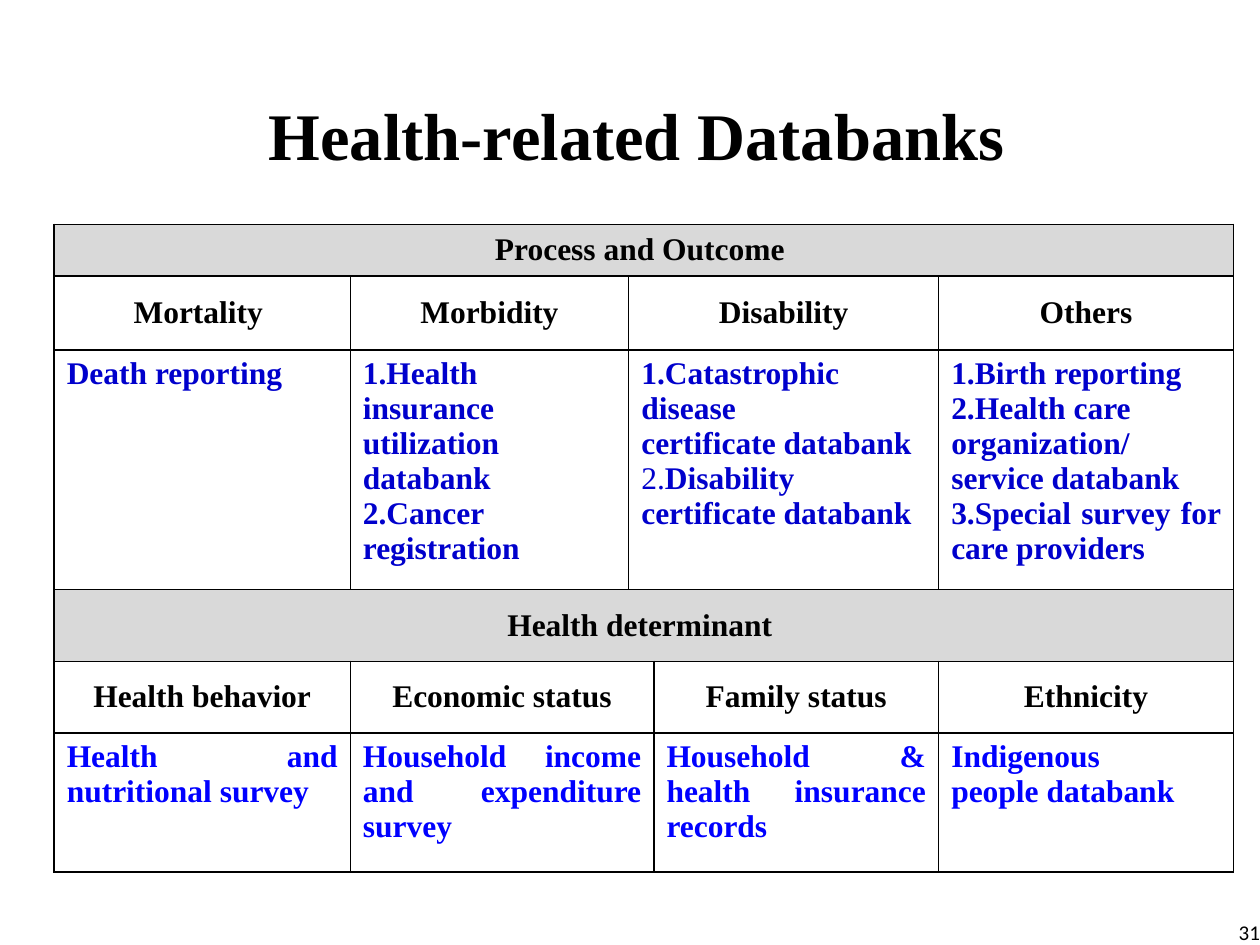
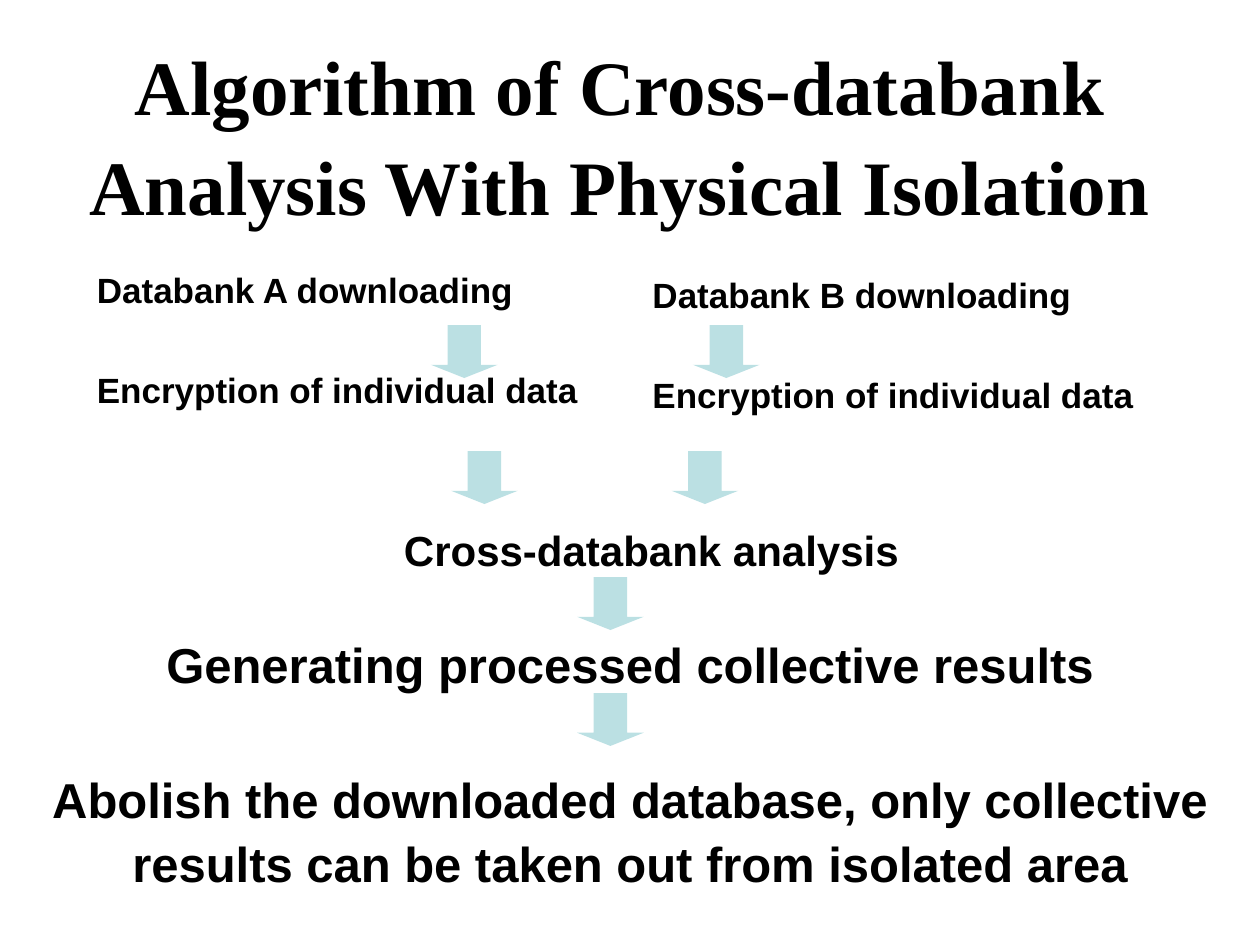
from lxml.etree import SubElement
from pptx import Presentation
from pptx.dml.color import RGBColor
from pptx.enum.shapes import MSO_SHAPE
from pptx.enum.text import MSO_ANCHOR, MSO_AUTO_SIZE, PP_ALIGN
from pptx.oxml.ns import qn
from pptx.util import Inches, Pt

BLACK, WHITE, GREY, TEAL = "000000", "FFFFFF", "D9D9D9", "BBE0E3"
NAVY, BLUE = "0000CC", "0000FF"
SERIF, SANS, FOOTER_FONT = "Times New Roman", "Arial", "Calibri"
TITLE_ONLY = 5
TITLE_MARGINS = (0, 0.05, 0, 0)

COLUMN_WIDTHS = (2.35, 2.21, 0.2, 2.26, 2.34)
ROW_HEIGHTS = (0.41, 0.59, 1.9, 0.57, 0.57, 1.1)
OUTCOME_SPANS = ((0, 0), (1, 1), (2, 3), (4, 4))
DETERMINANT_SPANS = ((0, 0), (1, 2), (3, 3), (4, 4))

OUTCOMES = {
    "Mortality ": ["Death reporting"],
    "Morbidity": ["1.Health insurance utilization databank", "2.Cancer registration"],
    "Disability": ["1.Catastrophic disease", "certificate databank",
                   [("2.", False), ("Disability", True)], "certificate databank"],
    "Others": ["1.Birth reporting", "2.Health care", "organization/service databank",
               "3.Special survey for care providers"],
}
DETERMINANTS = {
    "Health behavior": ["Health and nutritional survey"],
    "Economic status": ["Household income and expenditure survey"],
    "Family status": ["Household & health insurance records"],
    "Ethnicity": ["Indigenous", "people databank"],
}


def color(hex_code):
    """Turn a hex string into a colour."""
    return RGBColor.from_string(hex_code)


def write(frame, lines, size, font, ink=BLACK, bold=True, align=PP_ALIGN.LEFT,
          gap=0, spacing=None):
    """Fill a text frame; a line is a string or a list of (words, bold) runs."""
    for index, line in enumerate(lines):
        paragraph = frame.add_paragraph() if index else frame.paragraphs[0]
        paragraph.alignment = align
        paragraph.space_before = Pt(gap if index else 0)
        if spacing:
            paragraph.line_spacing = spacing
        for words, weight in [(line, bold)] if isinstance(line, str) else line:
            run = paragraph.add_run()
            run.text = words
            run.font.size, run.font.name, run.font.bold = Pt(size), font, weight
            run.font.color.rgb = color(ink)


def set_frame(frame, margins, anchor):
    """Set wrapping, margins and anchor of a text frame."""
    frame.word_wrap = True
    frame.auto_size = MSO_AUTO_SIZE.NONE
    frame.vertical_anchor = anchor
    (frame.margin_left, frame.margin_top,
     frame.margin_right, frame.margin_bottom) = map(Inches, margins)


def add_text(slide, box, lines, size, font, margins=TITLE_MARGINS,
             anchor=MSO_ANCHOR.BOTTOM, **style):
    """Add a text box at the given box."""
    frame = slide.shapes.add_textbox(*map(Inches, box)).text_frame
    set_frame(frame, margins, anchor)
    write(frame, lines, size, font, **style)


def add_titled_slide(deck, box, title, size, spacing=None):
    """Add a title-only slide with its title at the given box."""
    slide = deck.slides.add_slide(deck.slide_layouts[TITLE_ONLY])
    heading = slide.shapes.title
    heading.left, heading.top, heading.width, heading.height = map(Inches, box)
    set_frame(heading.text_frame, TITLE_MARGINS, MSO_ANCHOR.BOTTOM)
    write(heading.text_frame, [title], size, SERIF, align=PP_ALIGN.CENTER, spacing=spacing)
    return slide


def set_borders(cell):
    """Draw thin black borders on all sides of a cell."""
    properties = cell._tc.get_or_add_tcPr()
    for side in ("a:lnL", "a:lnR", "a:lnT", "a:lnB"):
        border = SubElement(properties, qn(side), w=str(Pt(1)))
        fill = SubElement(border, qn("a:solidFill"))
        SubElement(fill, qn("a:srgbClr"), val=BLACK)


def fill_row(table, row, spans, contents, shade=WHITE, ink=BLACK, heading=True):
    """Merge the spans of one table row and write its contents."""
    for (first, last), lines in zip(spans, contents):
        cell = table.cell(row, first)
        if last > first:
            cell.merge(table.cell(row, last))
        cell.fill.solid()
        cell.fill.fore_color.rgb = color(shade)
        cell.margin_left = cell.margin_right = Inches(0.1)
        cell.margin_top = cell.margin_bottom = Inches(0.05)
        cell.vertical_anchor = MSO_ANCHOR.MIDDLE if heading else MSO_ANCHOR.TOP
        write(cell.text_frame, lines, 18, SERIF, ink=ink,
              align=PP_ALIGN.CENTER if heading else PP_ALIGN.JUSTIFY)


def add_databank_table(slide, box):
    """Add the table of databanks in two banded sections."""
    table = slide.shapes.add_table(len(ROW_HEIGHTS), len(COLUMN_WIDTHS),
                                   *map(Inches, box)).table
    table.first_row = table.horz_banding = False
    for column, width in zip(table.columns, COLUMN_WIDTHS):
        column.width = Inches(width)
    for row, height in zip(table.rows, ROW_HEIGHTS):
        row.height = Inches(height)
    for cell in table.iter_cells():
        set_borders(cell)
    sections = (("Process and Outcome ", OUTCOME_SPANS, OUTCOMES, NAVY),
                ("Health determinant ", DETERMINANT_SPANS, DETERMINANTS, BLUE))
    for index, (band, spans, databanks, ink) in enumerate(sections):
        top = 3 * index
        fill_row(table, top, [(0, 4)], [[band]], shade=GREY)
        fill_row(table, top + 1, spans, [[topic] for topic in databanks])
        fill_row(table, top + 2, spans, databanks.values(), ink=ink, heading=False)


def add_down_arrow(slide, left, top):
    """Add one flow arrow pointing down."""
    arrow = slide.shapes.add_shape(MSO_SHAPE.DOWN_ARROW, Inches(left), Inches(top),
                                   Inches(0.53), Inches(0.42))
    arrow.adjustments[0], arrow.adjustments[1] = 0.5, 0.25
    arrow.shadow.inherit = False
    arrow.fill.solid()
    arrow.fill.fore_color.rgb = color(TEAL)
    arrow.line.fill.background()


def add_databank_steps(slide, box, databank):
    """Add the download and encryption steps of one databank."""
    add_text(slide, box, [f"Databank {databank} downloading", "Encryption of individual data"],
             20, SANS, margins=(0.1, 0.05, 0.1, 0.05), anchor=MSO_ANCHOR.TOP, gap=33)


def build_databanks_slide(deck):
    """Build the slide that lists the databanks."""
    slide = add_titled_slide(deck, (0.55, 0.7, 9.14, 0.68), "Health-related Databanks ", 38)
    add_databank_table(slide, (0.43, 1.78, sum(COLUMN_WIDTHS), sum(ROW_HEIGHTS)))
    add_text(slide, (8.97, 7.21, 1.03, 0.29), ["31"], 12, FOOTER_FONT,
             margins=(0, 0, 0, 0), bold=False, align=PP_ALIGN.RIGHT)


def build_algorithm_slide(deck):
    """Build the flow of the cross-databank analysis."""
    slide = add_titled_slide(deck, (0.42, 0.33, 9, 1.5),
                             "Algorithm of Cross-databank Analysis With Physical Isolation",
                             44, spacing=1.08)
    add_databank_steps(slide, (0.67, 2.08, 4.25, 1.97), "A")
    add_databank_steps(slide, (5.08, 2.12, 4.92, 2.05), "B")
    for left, top in ((3.42, 2.58), (5.5, 2.58), (3.58, 3.58), (5.33, 3.58),
                      (4.58, 4.58), (4.58, 5.5)):
        add_down_arrow(slide, left, top)
    results = (
        ((0.67, 4.06, 9, 0.5), "Cross-databank analysis", 24),
        ((0.5, 5, 9, 0.5), "Generating processed collective results", 28),
        ((0.25, 6.08, 9.5, 1), "Abolish the downloaded database, only collective "
                               "results can be taken out from isolated area", 28),
    )
    for box, step, size in results:
        add_text(slide, box, [step], size, SANS, align=PP_ALIGN.CENTER, spacing=1.08)


def main():
    """Build and save the deck."""
    deck = Presentation()
    deck.slide_width, deck.slide_height = Inches(10), Inches(7.5)
    build_databanks_slide(deck)
    build_algorithm_slide(deck)
    deck.save("out.pptx")


if __name__ == "__main__":
    main()
